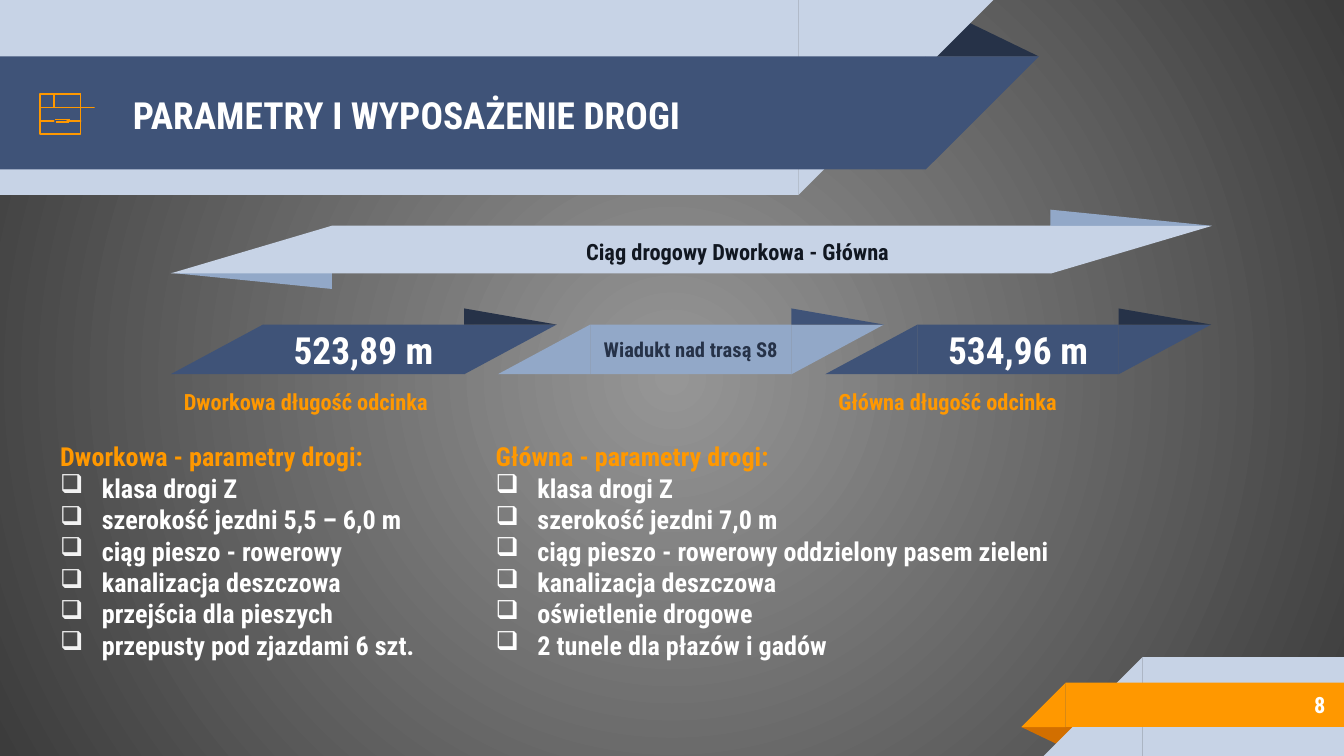
from dataclasses import dataclass

from lxml import etree
from pptx import Presentation
from pptx.dml.color import RGBColor
from pptx.enum.shapes import MSO_CONNECTOR, MSO_SHAPE
from pptx.enum.text import MSO_ANCHOR, PP_ALIGN
from pptx.oxml.ns import qn
from pptx.shapes.autoshape import Shape
from pptx.slide import Slide
from pptx.text.text import TextFrame
from pptx.util import Inches, Pt

RECTANGLE, CORNER, TRIANGLE = MSO_SHAPE.RECTANGLE, MSO_SHAPE.RIGHT_TRIANGLE, MSO_SHAPE.ISOSCELES_TRIANGLE
STRAIGHT, MIDDLE, TOP = MSO_CONNECTOR.STRAIGHT, MSO_ANCHOR.MIDDLE, MSO_ANCHOR.TOP
LEFT, CENTER, RIGHT = PP_ALIGN.LEFT, PP_ALIGN.CENTER, PP_ALIGN.RIGHT
SLIDE_WIDTH = Inches(10)
SLIDE_HEIGHT = SLIDE_WIDTH * 9 // 16
CELL = SLIDE_WIDTH // 100


@dataclass(frozen=True)
class Theme:
    """Colours, font and type sizes of the slide."""
    center: str = "969696"
    edge: str = "3C3C3C"
    pale: str = "C7D3E6"
    soft: str = "92A8C8"
    blue: str = "3F5378"
    navy: str = "263248"
    ink: str = "111721"
    orange: str = "FF9800"
    rust: str = "D26F00"
    white: str = "FFFFFF"
    bullet: str = "F2F2F2"
    font: str = "Roboto Condensed"
    large: int = 20
    medium: int = 14
    small: int = 12
    tiny: int = 11
    outline: float = 0.96


THEME = Theme()


@dataclass(frozen=True)
class Box:
    """A rectangle in grid columns and rows."""
    column: float
    row: float
    columns: float
    rows: float

    def lengths(self) -> list[int]:
        """Return left, top, width and height in slide units."""
        return [round(value * CELL) for value in (self.column, self.row, self.columns, self.rows)]


@dataclass(frozen=True)
class Label:
    """Text with its size, colour and alignment."""
    text: str
    size: int
    color: str
    align: PP_ALIGN = LEFT


@dataclass(frozen=True)
class Ribbon:
    """A band whose ends may be slanted."""
    body: Box
    color: str
    left_slant: float = 0
    right_slant: float = 0
    label: Label | None = None


@dataclass(frozen=True)
class Fold:
    """A triangular fold behind a ribbon."""
    box: Box
    color: str
    peak: float = 0
    rotation: int = 0


@dataclass(frozen=True)
class RoadList:
    """A heading with bulleted road features."""
    box: Box
    heading: str
    features: tuple[str, ...]
    bullet_color: str


BAR_LEFT, BAR_STEP, BAR_ROW, BAR_SLANT, BAR_BODY = 12.7, 24.35, 24.15, 6.88, 14.96
BARS = (
    (THEME.blue, THEME.navy, Label("523,89 m", THEME.large, THEME.white, CENTER)),
    (THEME.soft, THEME.blue, Label("Wiadukt nad trasą S8", THEME.tiny, THEME.navy, CENTER)),
    (THEME.blue, THEME.navy, Label("534,96 m", THEME.large, THEME.white, CENTER)),
)
FOLDS = (
    Fold(Box(68.8, 1.4, 8.5, 2.8), THEME.navy, 0.32),
    Fold(Box(76, 54.1, 4.3, 1.4), THEME.rust, 0.32, 180),
    Fold(Box(78.15, 15.6, 12, 1.2), THEME.soft),
    Fold(Box(12.7, 20.3, 12, 1.2), THEME.soft, 0, 180),
)
RIBBONS = (
    Ribbon(Box(0, 0, 59.4, 14.5), THEME.pale, right_slant=14.5),
    Ribbon(Box(0, 4.2, 68.9, 8.4), THEME.blue, right_slant=8.4),
    Ribbon(Box(85, 48.9, 15, 7.35), THEME.pale, left_slant=7.35),
    Ribbon(Box(79.3, 50.8, 20.7, 3.3), THEME.orange, left_slant=3.3),
    Ribbon(Box(24.7, 16.8, 53.5, 3.55), THEME.pale, 12, 12),
)
TEXTS = (
    (Box(8.9, 4.3, 60, 8.4), Label("PARAMETRY I WYPOSAŻENIE DROGI", THEME.large, THEME.white)),
    (Box(83.3, 50.7, 16.3, 3.5), Label("8", THEME.small, THEME.white, RIGHT)),
    (Box(30.6, 16.8, 48.6, 3.8), Label("Ciąg drogowy Dworkowa - Główna", THEME.small, THEME.ink, CENTER)),
    (Box(12.7, 29, 22.3, 1.7), Label("Dworkowa długość odcinka", THEME.small, THEME.orange)),
    (Box(61.4, 28.8, 20.9, 2.2), Label("Główna długość odcinka", THEME.small, THEME.orange)),
)
LISTS = (
    RoadList(Box(3.5, 31.8, 31, 22.4), "Dworkowa - parametry drogi:", (
        "klasa drogi Z", "szerokość jezdni 5,5 – 6,0 m", "ciąg pieszo - rowerowy",
        "kanalizacja deszczowa", "przejścia dla pieszych", "przepusty pod zjazdami 6 szt."), THEME.bullet),
    RoadList(Box(35.9, 31.8, 44.2, 22.4), "Główna - parametry drogi:", (
        "klasa drogi Z", "szerokość jezdni 7,0 m", "ciąg pieszo - rowerowy oddzielony pasem zieleni",
        "kanalizacja deszczowa", "oświetlenie drogowe", "2 tunele dla płazów i gadów"), THEME.white),
)
CAR_AXIS = 4.66
CAR_BODY = [(4.66, 6.9), (5.1, 6.9), (5.5, 6.94), (5.8, 7.04), (5.98, 7.3), (6.13, 7.7), (6.4, 7.7), (6.55, 7.8),
            (6.62, 8), (6.55, 8.13), (6.32, 8.25), (6.43, 8.55), (6.48, 8.8), (6.48, 9.65)]
CAR_WINDOW = [(4.66, 7.2), (5.1, 7.2), (5.6, 7.28), (5.72, 7.36), (5.8, 7.6), (5.9, 8.08), (5.82, 8.2),
              (5.6, 8.3), (5.1, 8.38), (4.66, 8.4)]
CAR_WHEEL = [(5.9, 9.7), (5.92, 9.9), (6.02, 10.04), (6.18, 10.1), (6.36, 10.04), (6.46, 9.9), (6.48, 9.7)]
CAR_LIGHT = [(5.8, 9.3), (5.55, 9.28), (5.47, 9.15), (5.55, 8.95), (5.7, 8.8), (5.9, 8.8), (6.08, 8.9),
             (6.15, 9.05), (6.05, 9.25)]
CAR_GRILLE = ((4.1, 5.2, 8.9), (4.2, 5.1, 9.1))


def paint_background(slide: Slide) -> None:
    """Fill the slide with a radial gradient."""
    fill = slide.background.fill
    fill.gradient()
    for stop, color in zip(fill.gradient_stops, (THEME.center, THEME.edge)):
        stop.color.rgb = RGBColor.from_string(color)
    gradient = slide.element.find(".//" + qn("a:gradFill"))
    gradient.remove(gradient.find(qn("a:lin")))
    circle = etree.SubElement(gradient, qn("a:path"), {"path": "circle"})
    etree.SubElement(circle, qn("a:fillToRect"), {side: "50000" for side in "ltrb"})


def write(frame: TextFrame, labels: list[Label], anchor: MSO_ANCHOR = MIDDLE, bullet_color: str = "") -> None:
    """Write one paragraph per label, with bullets after the first if coloured."""
    margins = {f"margin_{side}": CELL for side in ("left", "top", "right", "bottom")}
    for name, value in {"word_wrap": True, "vertical_anchor": anchor, **margins}.items():
        setattr(frame, name, value)
    for index, label in enumerate(labels):
        paragraph = frame.add_paragraph() if index else frame.paragraphs[0]
        paragraph.alignment = label.align
        if index and bullet_color:
            properties = paragraph._p.get_or_add_pPr()
            properties.set("marL", str(Inches(0.31)))
            properties.set("indent", str(-Inches(0.31)))
            tint = etree.SubElement(properties, qn("a:buClr"))
            etree.SubElement(tint, qn("a:srgbClr"), {"val": bullet_color})
            etree.SubElement(properties, qn("a:buChar"), {"char": "❑"})
        run = paragraph.add_run()
        run.text = label.text
        for name, value in {"name": THEME.font, "size": Pt(label.size), "bold": True}.items():
            setattr(run.font, name, value)
        run.font.color.rgb = RGBColor.from_string(label.color)


def add_piece(slide: Slide, kind: MSO_SHAPE, box: Box, color: str, rotation: int = 0) -> Shape:
    """Add a filled shape without outline or shadow."""
    shape = slide.shapes.add_shape(kind, *box.lengths())
    shape.shadow.inherit = False
    shape.fill.solid()
    shape.fill.fore_color.rgb = RGBColor.from_string(color)
    shape.line.fill.background()
    shape.rotation = rotation
    return shape


def add_ribbon(slide: Slide, ribbon: Ribbon) -> None:
    """Add the body of a ribbon and its slanted ends."""
    body = ribbon.body
    shape = add_piece(slide, RECTANGLE, body, ribbon.color)
    if ribbon.label:
        write(shape.text_frame, [ribbon.label])
    ends = ((body.column - ribbon.left_slant, ribbon.left_slant, 0),
            (body.column + body.columns, ribbon.right_slant, 180))
    for column, slant, rotation in ends:
        if slant:
            end = add_piece(slide, CORNER, Box(column, body.row, slant, body.rows), ribbon.color, rotation)
            end._element.spPr.xfrm.set("flipH", "1")


def add_fold(slide: Slide, fold: Fold) -> None:
    """Add a triangular fold."""
    shape = add_piece(slide, TRIANGLE, fold.box, fold.color, fold.rotation)
    shape.adjustments[0] = fold.peak


def add_text(slide: Slide, box: Box, labels: list[Label], anchor: MSO_ANCHOR = MIDDLE, bullet_color: str = "") -> None:
    """Add a text box."""
    write(slide.shapes.add_textbox(*box.lengths()).text_frame, labels, anchor, bullet_color)


def mirror(points: list[tuple[float, float]]) -> list[tuple[float, float]]:
    """Reflect points across the axis of the car."""
    return [(2 * CAR_AXIS - column, row) for column, row in points]


def add_outline(slide: Slide, points: list[tuple[float, float]], close: bool = True) -> None:
    """Draw an unfilled outline through grid points."""
    builder = slide.shapes.build_freeform(*points[0], scale=CELL)
    builder.add_line_segments(points[1:], close=close)
    shape = builder.convert_to_shape()
    shape.shadow.inherit = False
    shape.fill.background()
    shape.line.color.rgb = RGBColor.from_string(THEME.orange)
    shape.line.width = Pt(THEME.outline)


def add_car(slide: Slide) -> None:
    """Draw the car icon from mirrored halves."""
    for half in (CAR_BODY, CAR_WINDOW):
        add_outline(slide, half + mirror(half)[::-1])
    for part, close in ((CAR_WHEEL, False), (CAR_LIGHT, True)):
        add_outline(slide, part, close)
        add_outline(slide, mirror(part), close)
    for start, end, row in CAR_GRILLE:
        line = slide.shapes.add_connector(STRAIGHT, *[round(value * CELL) for value in (start, row, end, row)])
        line.line.color.rgb = RGBColor.from_string(THEME.orange)
        line.line.width = Pt(THEME.outline)
        etree.SubElement(line._element.spPr, qn("a:effectLst"))


def main() -> None:
    """Build and save the slide."""
    presentation = Presentation()
    presentation.slide_width, presentation.slide_height = SLIDE_WIDTH, SLIDE_HEIGHT
    slide = presentation.slides.add_slide(presentation.slide_layouts[6])
    paint_background(slide)
    for fold in FOLDS:
        add_fold(slide, fold)
    for ribbon in RIBBONS:
        add_ribbon(slide, ribbon)
    for index, (color, fold_color, label) in enumerate(BARS):
        column = BAR_LEFT + index * BAR_STEP + BAR_SLANT
        add_ribbon(slide, Ribbon(Box(column, BAR_ROW, BAR_BODY, 3.7), color, BAR_SLANT, BAR_SLANT, label))
        add_fold(slide, Fold(Box(column + BAR_BODY, BAR_ROW - 1.2, BAR_SLANT, 1.2), fold_color))
    add_car(slide)
    for box, label in TEXTS:
        add_text(slide, box, [label])
    for road in LISTS:
        labels = [Label(road.heading, THEME.medium, THEME.orange)]
        labels += [Label(feature, THEME.medium, THEME.white) for feature in road.features]
        add_text(slide, road.box, labels, TOP, road.bullet_color)
    presentation.save("out.pptx")


if __name__ == "__main__":
    main()
